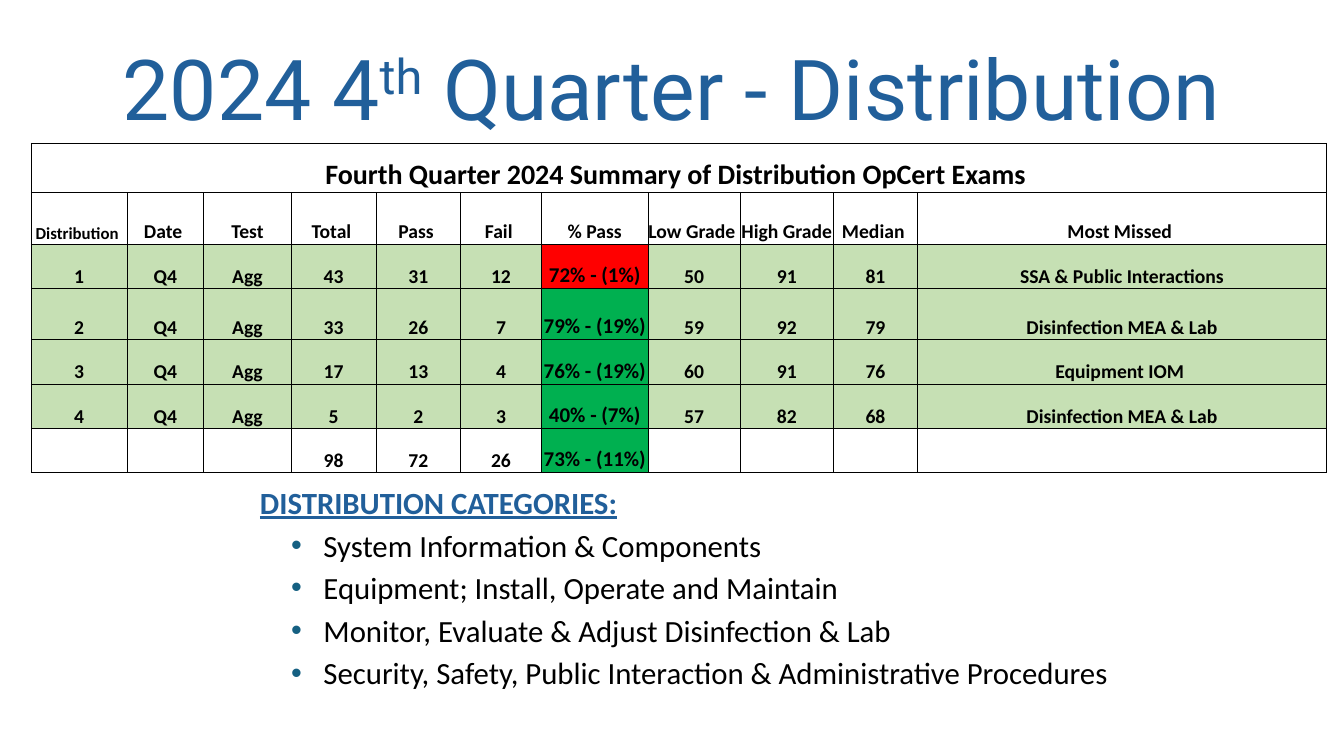
from dataclasses import dataclass

from lxml import etree
from pptx import Presentation
from pptx import util as u
from pptx.dml.color import RGBColor
from pptx.enum import text
from pptx.oxml import ns


@dataclass(frozen=True)
class Theme:
    """Colours, fonts and type sizes of the slide."""
    heading: str = "215F9A"
    ink: str = "000000"
    bullet: str = "156082"
    row: str = "C6E0B4"
    down: str = "FF0000"
    up: str = "00B050"
    title_font: str = "Roboto"
    body_font: str = "Calibri"
    title_size: float = 60
    list_size: float = 22
    caption_size: float = 20
    rate_size: float = 15
    cell_size: float = 14
    label_size: float = 12
    border: float = 0.5


THEME = Theme()
COLUMN_WIDTHS = [0.95, 0.76, 0.87, 0.84, 0.84, 0.8, 1.06, 0.91, 0.93, 0.83, 4.06]
ROW_HEIGHTS = [0.49, 0.51, 0.44, 0.51, 0.44, 0.44, 0.44]
RATE_COLUMN = 6
CAPTION = "Fourth Quarter 2024 Summary of Distribution OpCert Exams "
HEADERS = ["Distribution ", "Date ", "Test", "Total ", "Pass ", "Fail ", "% Pass",
           "Low Grade ", "High Grade ", "Median ", "Most Missed "]
RESULTS = [
    ["1", "Q4", "Agg", "43", "31", "12", "72% - (1%)", "50", "91", "81",
     "SSA & Public Interactions"],
    ["2", "Q4", "Agg", "33", "26", "7", "79% - (19%)", "59", "92", "79",
     "Disinfection MEA & Lab"],
    ["3", "Q4", "Agg", "17", "13", "4", "76% - (19%)", "60", "91", "76",
     "Equipment IOM "],
    ["4", "Q4", "Agg", "5", "2", "3", "40% - (7%)", "57", "82", "68",
     "Disinfection MEA & Lab"],
]
TOTALS = ["", "", "", "98", "72", "26", "73% - (11%)", "", "", "", ""]
CATEGORIES = [
    "System Information & Components",
    "Equipment; Install, Operate and Maintain",
    "Monitor, Evaluate & Adjust Disinfection & Lab",
    "Security, Safety, Public Interaction & Administrative Procedures",
]


def add_run(paragraph, words, size, color, font=THEME.body_font, bold=False):
    """Append a styled run and return it."""
    run = paragraph.add_run()
    run.text = words
    run.font.size = u.Pt(size)
    run.font.name = font
    run.font.bold = bold
    run.font.color.rgb = RGBColor.from_string(color)
    return run


def add_frame(slide, box, anchor):
    """Add a wrapping text box and return its text frame."""
    frame = slide.shapes.add_textbox(*map(u.Inches, box)).text_frame
    frame.word_wrap = True
    frame.vertical_anchor = anchor
    return frame


def add_title(slide, box):
    """Place the slide title with its raised ordinal."""
    heading = add_frame(slide, box, text.MSO_ANCHOR.BOTTOM).paragraphs[0]
    heading.alignment = text.PP_ALIGN.CENTER
    heading.line_spacing = 0.9
    for words, baseline in [("2024 4", 0), ("th", 30000), (" Quarter - Distribution", 0)]:
        run = add_run(heading, words, THEME.title_size, THEME.heading, THEME.title_font)
        if baseline:
            run.font._element.set("baseline", str(baseline))


def add_bullet(paragraph):
    """Give a paragraph a hanging coloured bullet."""
    properties = paragraph._p.get_or_add_pPr()
    properties.set("marL", str(u.Inches(0.63)))
    properties.set("indent", str(u.Inches(-0.32)))
    color = etree.SubElement(properties, ns.qn("a:buClr"))
    etree.SubElement(color, ns.qn("a:srgbClr"), val=THEME.bullet)
    etree.SubElement(properties, ns.qn("a:buFont"), typeface="Arial")
    etree.SubElement(properties, ns.qn("a:buChar"), char="•")


def add_categories(slide, box):
    """Place the underlined heading and the bulleted categories."""
    frame = add_frame(slide, box, text.MSO_ANCHOR.TOP)
    heading = add_run(frame.paragraphs[0], "DISTRIBUTION CATEGORIES:",
                      THEME.list_size, THEME.heading, bold=True)
    heading.font.underline = True
    for category in CATEGORIES:
        item = frame.add_paragraph()
        add_bullet(item)
        item.space_before = u.Pt(4)
        add_run(item, category, THEME.list_size, THEME.ink)


def style_cell(cell, fill):
    """Set the borders, margins, anchor and fill of a cell."""
    properties = cell._tc.get_or_add_tcPr()
    for side in ("lnL", "lnR", "lnT", "lnB"):
        line = etree.SubElement(properties, ns.qn(f"a:{side}"), w=str(u.Pt(THEME.border)))
        solid = etree.SubElement(line, ns.qn("a:solidFill"))
        etree.SubElement(solid, ns.qn("a:srgbClr"), val=THEME.ink)
    cell.margin_left = cell.margin_right = cell.margin_top = cell.margin_bottom = 0
    cell.vertical_anchor = text.MSO_ANCHOR.BOTTOM
    if fill:
        cell.fill.solid()
        cell.fill.fore_color.rgb = RGBColor.from_string(fill)
    else:
        cell.fill.background()


def cell_look(row, column):
    """Return the type size and fill for a table position."""
    first_result, totals = 2, len(ROW_HEIGHTS) - 1
    if row == 0:
        return THEME.caption_size, None
    if row < first_result:
        return (THEME.label_size if column == 0 else THEME.cell_size), None
    if column == RATE_COLUMN:
        return THEME.rate_size, THEME.down if row == first_result else THEME.up
    return THEME.cell_size, None if row == totals else THEME.row


def add_results(slide, box):
    """Place the table of exam results."""
    rows = [[CAPTION] + [""] * (len(HEADERS) - 1), HEADERS, *RESULTS, TOTALS]
    table = slide.shapes.add_table(len(rows), len(HEADERS), *map(u.Inches, box)).table
    table.first_row = table.horz_banding = False
    for column, width in zip(table.columns, COLUMN_WIDTHS):
        column.width = u.Inches(width)
    for row, height in zip(table.rows, ROW_HEIGHTS):
        row.height = u.Inches(height)
    table.cell(0, 0).merge(table.cell(0, len(HEADERS) - 1))
    for r, values in enumerate(rows):
        for c, value in enumerate(values):
            cell = table.cell(r, c)
            size, fill = cell_look(r, c)
            style_cell(cell, fill)
            if value:
                entry = cell.text_frame.paragraphs[0]
                entry.alignment = text.PP_ALIGN.CENTER
                add_run(entry, value, size, THEME.ink, bold=True)


def main():
    """Build and save the presentation."""
    deck = Presentation()
    deck.slide_width, deck.slide_height = u.Inches(13.33), u.Inches(7.5)
    slide = deck.slides.add_slide(deck.slide_layouts[6])
    add_title(slide, (0.41, 0.34, 12.5, 1.08))
    add_categories(slide, (2.48, 4.75, 9.79, 2.33))
    add_results(slide, (0.31, 1.42, 12.86, 3.26))
    deck.save("out.pptx")


if __name__ == "__main__":
    main()
